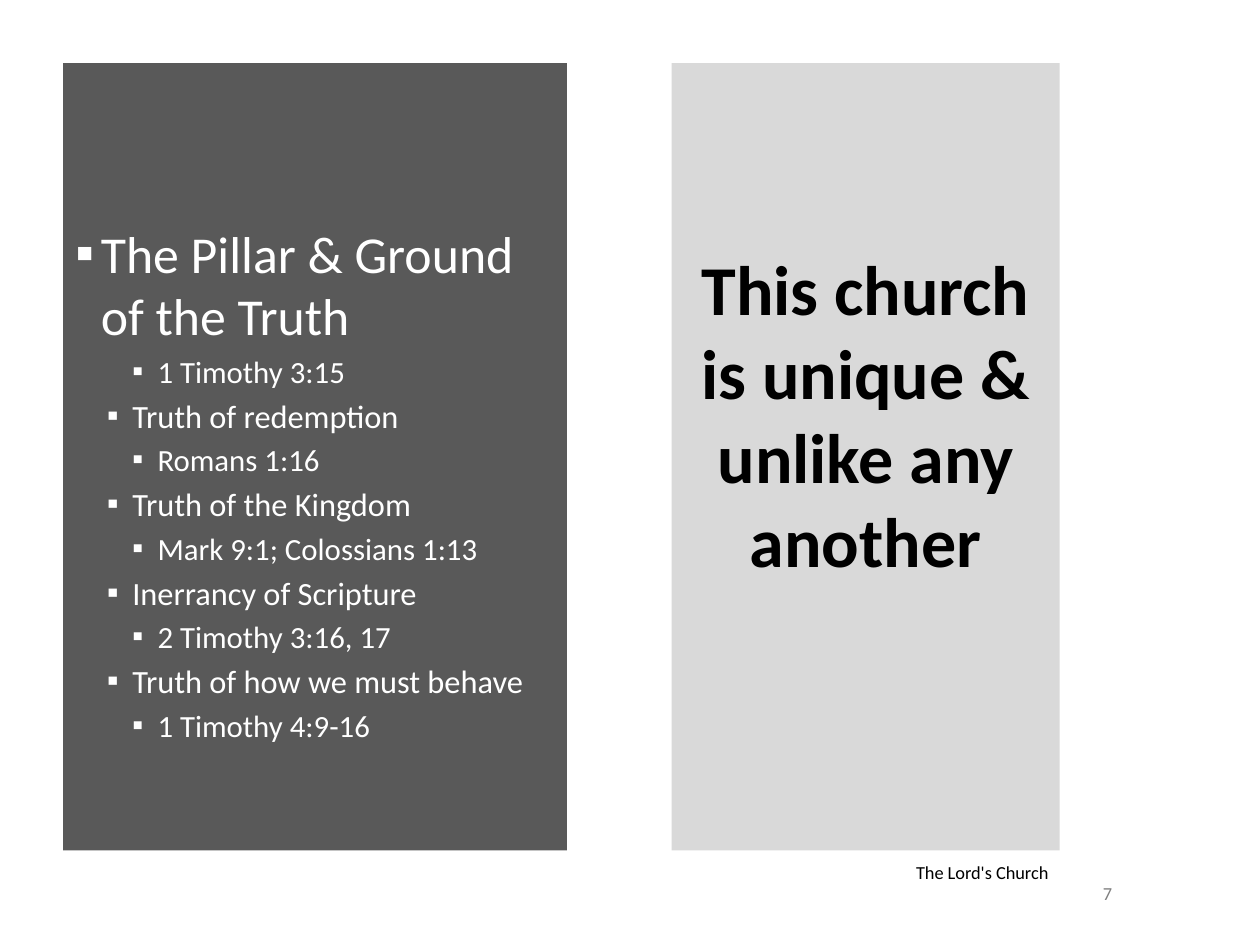
from lxml import etree
from pptx import Presentation
from pptx.dml.color import RGBColor
from pptx.enum import text as tx
from pptx.oxml.ns import qn
from pptx.util import Inches, Pt

FONT = "Calibri"
WHITE = RGBColor(0xFF, 0xFF, 0xFF)
BLACK = RGBColor(0, 0, 0)
GRAY = RGBColor(0x80, 0x80, 0x80)
DARK = RGBColor(0x59, 0x59, 0x59)
LIGHT = RGBColor(0xD9, 0xD9, 0xD9)
LEFT, CENTER, RIGHT = tx.PP_ALIGN.LEFT, tx.PP_ALIGN.CENTER, tx.PP_ALIGN.RIGHT
TOP, MIDDLE, BOTTOM = (tx.MSO_ANCHOR.TOP, tx.MSO_ANCHOR.MIDDLE,
                       tx.MSO_ANCHOR.BOTTOM)

# Content
TITLE = "This church is unique & unlike any another"
POINTS = [
    (0, "The Pillar & Ground of the Truth"),
    (2, "1 Timothy 3:15"),
    (1, "Truth of redemption"),
    (2, "Romans 1:16"),
    (1, "Truth of the Kingdom"),
    (2, "Mark 9:1; Colossians 1:13"),
    (1, "Inerrancy of Scripture"),
    (2, "2 Timothy 3:16, 17"),
    (1, "Truth of how we must behave"),
    (2, "1 Timothy 4:9-16"),
]
LEVELS = [(29.6, 0.2), (18.5, 0.45), (17.6, 0.65)]  # size, indent
FOOTER, NUMBER = "The Lord's Church", "7"


def place(shape, box, anchor, top=0.05, bottom=0.05):
    shape.left, shape.top, shape.width, shape.height = map(Inches, box)
    frame = shape.text_frame
    frame.word_wrap = True
    frame.auto_size = tx.MSO_AUTO_SIZE.NONE
    frame.vertical_anchor = anchor
    frame.margin_left = frame.margin_right = Inches(0.1)
    frame.margin_top, frame.margin_bottom = Inches(top), Inches(bottom)
    return frame


def write(para, words, size, color, align=LEFT, bold=False):
    para.alignment = align
    run = para.add_run()
    run.text = words
    font = run.font
    font.name, font.size, font.bold = FONT, Pt(size), bold
    font.color.rgb = color


def bullet(para, indent):
    props = para._p.get_or_add_pPr()
    props.set("marL", str(Inches(indent)))
    props.set("indent", str(Inches(-0.2)))
    color = etree.SubElement(props, qn("a:buClr"))
    etree.SubElement(color, qn("a:srgbClr"), val=str(WHITE))
    etree.SubElement(props, qn("a:buFont"), typeface=FONT)
    etree.SubElement(props, qn("a:buChar"), char="▪")


def fill(shape, color):
    shape.fill.solid()
    shape.fill.fore_color.rgb = color


def main():
    deck = Presentation()
    deck.slide_width, deck.slide_height = Inches(10), Inches(7.5)
    slide = deck.slides.add_slide(deck.slide_layouts[1])

    # Dark panel with the list
    body = slide.placeholders[1]
    fill(body, DARK)
    frame = place(body, (0.5, 0.5, 4, 6.25), TOP, top=1.26)
    for i, (level, words) in enumerate(POINTS):
        para = frame.add_paragraph() if i else frame.paragraphs[0]
        size, indent = LEVELS[level]
        para.level = level
        bullet(para, indent)
        para.space_before = Pt(0.2 * size if i else 0)
        write(para, words, size, WHITE)

    # Light panel with the title
    title = slide.shapes.title
    fill(title, LIGHT)
    frame = place(title, (5.33, 0.5, 3.08, 6.25), MIDDLE, bottom=0.73)
    write(frame.paragraphs[0], TITLE, 40, BLACK, align=CENTER, bold=True)

    # Slide number and footer
    for words, box, anchor, align, color in [
        (NUMBER, (8.5, 7, 0.58, 0.17), MIDDLE, CENTER, GRAY),
        (FOOTER, (5.33, 6.89, 3.09, 0.17), BOTTOM, RIGHT, BLACK),
    ]:
        note = slide.shapes.add_textbox(*map(Inches, box))
        frame = place(note, box, anchor)
        write(frame.paragraphs[0], words, 10.5, color, align=align)

    deck.save("out.pptx")


if __name__ == "__main__":
    main()
